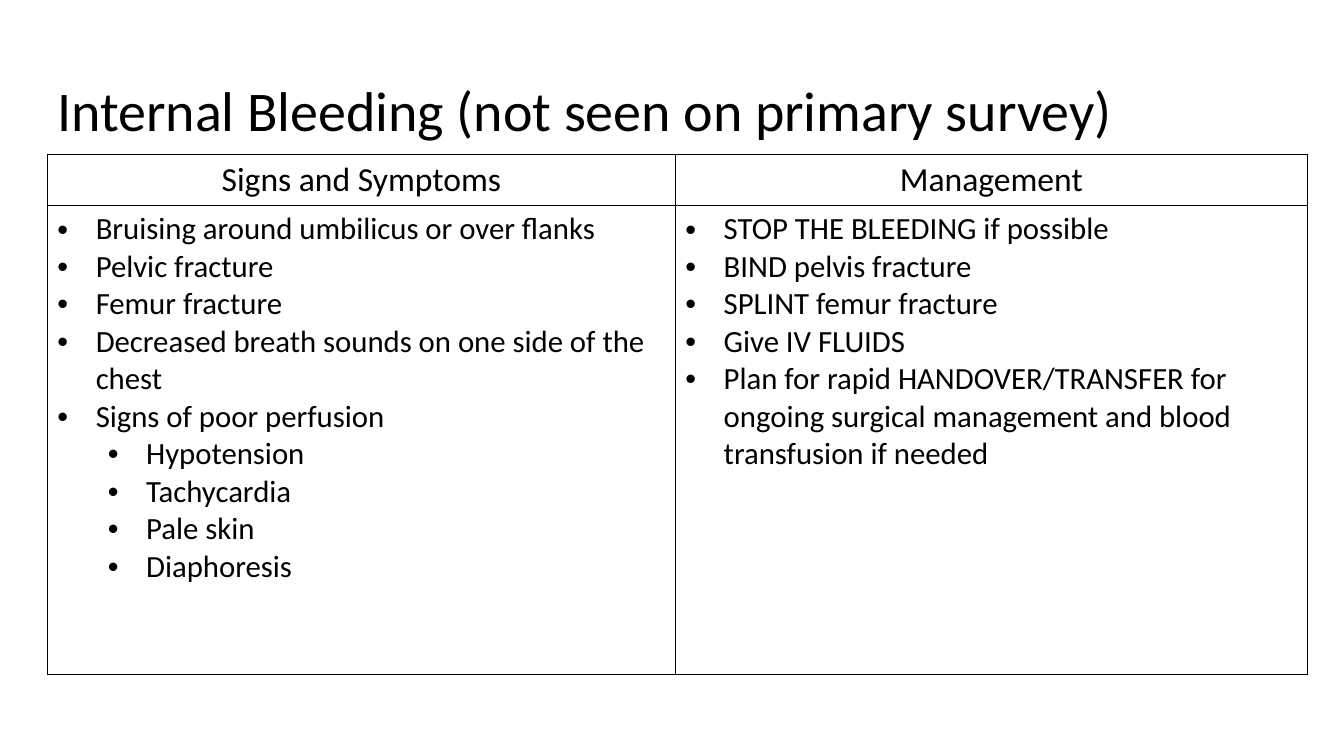
"""Build the internal bleeding slide: a title above a two-column table."""
from lxml import etree
from pptx import Presentation
from pptx import util as u
from pptx.dml.color import RGBColor
from pptx.enum import text
from pptx.oxml import ns

TITLE = "Internal Bleeding (not seen on primary survey)"
COLS = [
    ("Signs and Symptoms", 623, [
        (0, "Bruising around umbilicus or over flanks"),
        (0, "Pelvic fracture"),
        (0, "Femur fracture"),
        (0, "Decreased breath sounds on one side of the chest"),
        (0, "Signs of poor perfusion"),
        (1, "Hypotension"),
        (1, "Tachycardia"),
        (1, "Pale skin"),
        (1, "Diaphoresis"),
    ]),
    ("Management", 627, [
        (0, "STOP THE BLEEDING if possible"),
        (0, "BIND pelvis fracture"),
        (0, "SPLINT femur fracture"),
        (0, "Give IV FLUIDS"),
        (0, "Plan for rapid HANDOVER/TRANSFER for ongoing surgical "
            "management and blood transfusion if needed"),
    ]),
]
ROWS = [51, 465]
LEFT, TOP = 47, 153
HANG, STEP = 38, 50
FONT = "Calibri"
INK = {"text": "000000", "line": "000000"}


def px(n):
    return u.Emu(n * 9144)


def style(para, size):
    for run in para.runs:
        run.font.name = FONT
        run.font.size = u.Pt(size)
        run.font.bold = False
        run.font.color.rgb = RGBColor.from_string(INK["text"])


def bullet(para, level):
    para.level = level
    props = para._p.get_or_add_pPr()
    props.set("marL", str(px(HANG + STEP * level)))
    props.set("indent", str(px(-HANG)))
    face = etree.SubElement(props, ns.qn("a:buFont"))
    face.set("typeface", "Arial")
    mark = etree.SubElement(props, ns.qn("a:buChar"))
    mark.set("char", "•")


def border(cell):
    props = cell._tc.get_or_add_tcPr()
    for side in ("lnL", "lnR", "lnT", "lnB"):
        line = etree.SubElement(props, ns.qn("a:" + side), w=str(u.Pt(1)))
        fill = etree.SubElement(line, ns.qn("a:solidFill"))
        etree.SubElement(fill, ns.qn("a:srgbClr"), val=INK["line"])
    cell.fill.background()


def main():
    deck = Presentation()
    deck.slide_width, deck.slide_height = u.Inches(13.333), u.Inches(7.5)
    slide = deck.slides.add_slide(deck.slide_layouts[5])

    title = slide.shapes.title
    title.left, title.top = px(LEFT), px(40)
    title.width, title.height = px(1240), px(145)
    frame = title.text_frame
    frame.text = TITLE
    frame.word_wrap = True
    frame.vertical_anchor = text.MSO_ANCHOR.MIDDLE
    head = frame.paragraphs[0]
    head.alignment = text.PP_ALIGN.LEFT
    head.line_spacing = 0.9
    style(head, 40)

    wide = sum(width for _, width, _ in COLS)
    table = slide.shapes.add_table(
        len(ROWS), len(COLS), px(LEFT), px(TOP), px(wide), px(sum(ROWS))).table
    table.first_row = table.horz_banding = False
    for row, tall in zip(table.rows, ROWS):
        row.height = px(tall)

    for c, (name, width, items) in enumerate(COLS):
        table.columns[c].width = px(width)
        top, body = table.cell(0, c), table.cell(1, c)
        top.text_frame.text = name
        para = top.text_frame.paragraphs[0]
        para.alignment = text.PP_ALIGN.CENTER
        style(para, 24)
        body.text_frame.text = "\n".join(line for _, line in items)
        for para, (level, _) in zip(body.text_frame.paragraphs, items):
            bullet(para, level)
            style(para, 22)
        border(top)
        border(body)

    deck.save("out.pptx")


if __name__ == "__main__":
    main()
